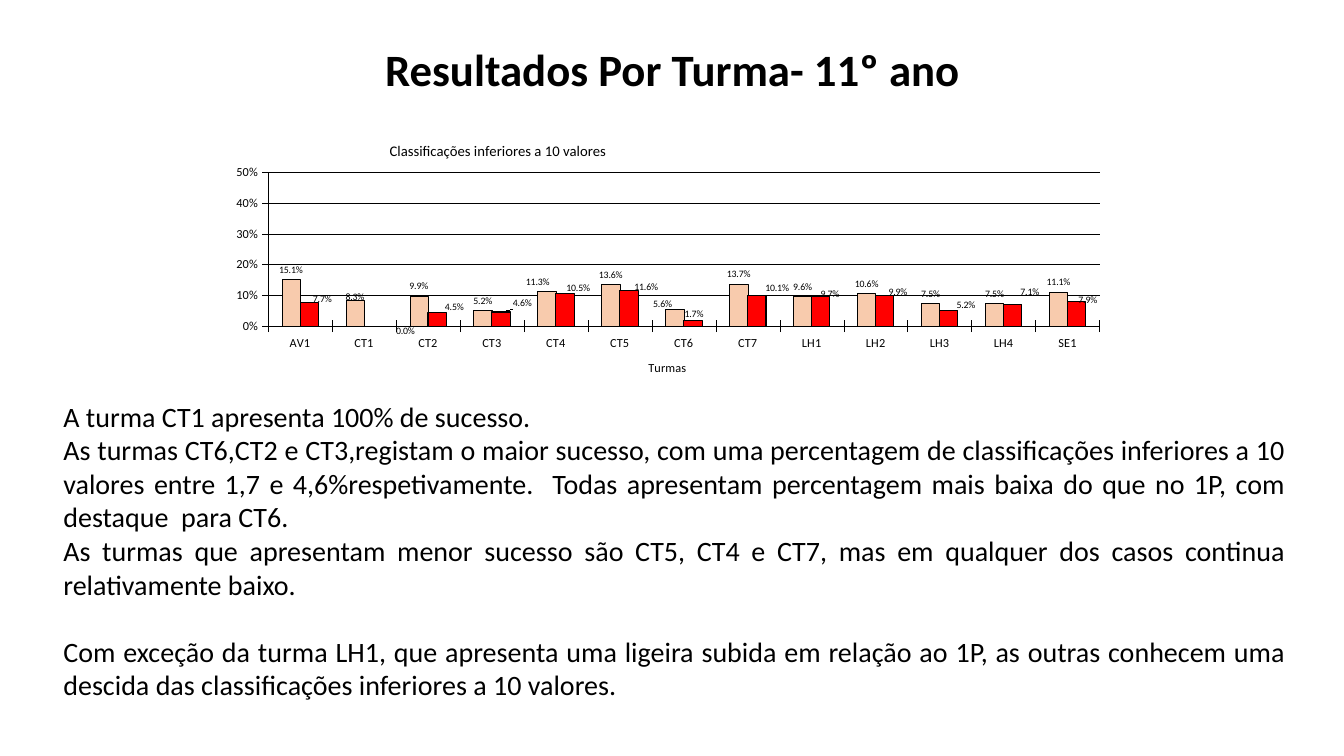
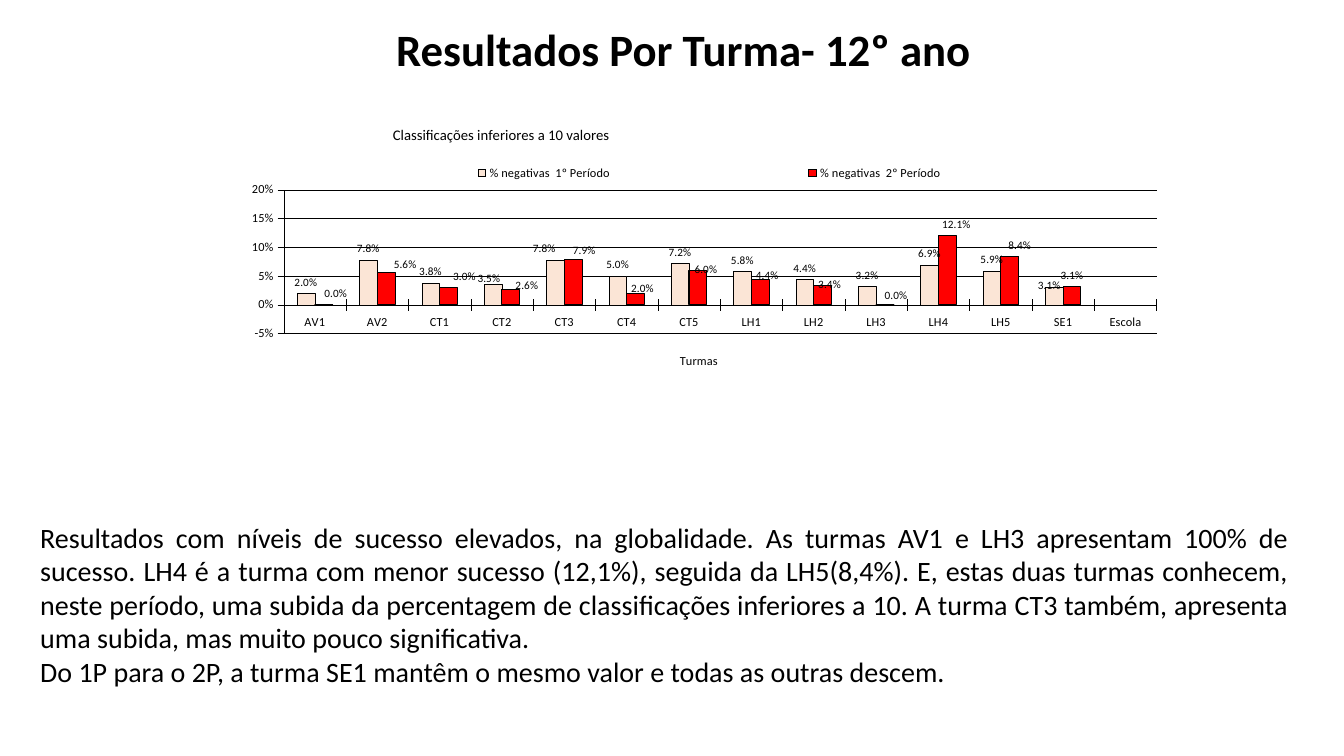
"""Build two slides of class results, each with a column chart and comments."""
from copy import deepcopy

from lxml import etree
from pptx import Presentation
from pptx.chart.data import CategoryChartData as Data
from pptx.dml.color import RGBColor
from pptx.enum.chart import XL_CHART_TYPE as Kind
from pptx.enum.chart import XL_LABEL_POSITION as Spot
from pptx.enum.chart import XL_LEGEND_POSITION as Side
from pptx.enum.chart import XL_TICK_MARK as Tick
from pptx.enum.text import MSO_ANCHOR as Anchor
from pptx.enum.text import PP_ALIGN as Align
from pptx.oxml.ns import qn
from pptx.util import Inches, Pt

FONT = "Calibri"
BLACK = "000000"
RED = "FF0000"


def hue(code):
    return RGBColor.from_string(code)


def lay(node, slot, place, edge=True):
    for old in node.findall(qn("c:layout")):
        node.remove(old)
    box = etree.Element(qn("c:layout"))
    node.insert(slot, box)
    man = etree.SubElement(box, qn("c:manualLayout"))
    tags = [("layoutTarget", "inner")] if node.tag == qn("c:plotArea") else []
    if edge:
        tags += [("xMode", "edge"), ("yMode", "edge")]
    tags += zip("xywh", place)
    for tag, val in tags:
        etree.SubElement(man, qn("c:" + tag)).set("val", str(val))


pages = [
    {
        "title": "Resultados Por Turma- 11º ano",
        "head": (0.92, 0.4),
        "text": (0.53, 3.91, 12.32, 3.47),
        "paras": [
            ("A turma CT1 apresenta 100% de sucesso.", 0),
            ("As turmas CT6,CT2 e CT3,registam o maior sucesso, com uma percentagem de "
             "classificações inferiores a 10 valores entre 1,7 e 4,6%respetivamente.  Todas "
             "apresentam percentagem mais baixa do que no 1P, com destaque  para CT6.", 0),
            ("As turmas que apresentam menor sucesso são CT5, CT4 e CT7, mas em qualquer "
             "dos casos continua relativamente baixo.", 0),
            ("Com exceção da turma LH1, que apresenta uma ligeira subida em relação ao 1P, "
             "as outras conhecem uma descida das classificações inferiores a 10 valores.", 24),
        ],
        "chart": (1.16, 1.03, 10.71, 2.83),
        "plot": (0.14, 0.24, 0.77, 0.54),
        "foot": (0.49, 0.89),
        "key": None,
        "scale": (0, 0.5, 0.1),
        "size": 7,
        "cats": "AV1 CT1 CT2 CT3 CT4 CT5 CT6 CT7 LH1 LH2 LH3 LH4 SE1",
        "rows": [
            ("Series 1", "F8CBAD", 0.25,
             [15.1, 8.3, 9.9, 5.2, 11.3, 13.6, 5.6, 13.7, 9.6, 10.6, 7.5, 7.5, 11.1],
             {1: (0, 6), 4: (-9, 0), 6: (-12, 5)}),
            ("Series 2", RED, 0.75,
             [7.7, 0, 4.5, 4.6, 10.5, 11.6, 1.7, 10.1, 9.7, 9.9, 5.2, 7.1, 7.9],
             dict(enumerate([(13, 6), (32, 14), (17, 4), (21, 1), (13, 4), (17, 6), (1, 3),
                             (20, 2), (9, 7), (13, 6), (17, 4), (17, -3), (11, 8)]))),
        ],
    },
    {
        "title": "Resultados Por Turma- 12º ano",
        "head": (1.03, 0.2),
        "text": (0.3, 5.11, 12.58, 1.78),
        "paras": [
            ("Resultados com níveis de sucesso elevados, na globalidade. As turmas AV1 e LH3 "
             "apresentam 100% de sucesso. LH4 é a turma com menor sucesso (12,1%), seguida da "
             "LH5(8,4%). E, estas duas turmas conhecem, neste período, uma subida da "
             "percentagem de classificações inferiores a 10. A turma CT3 também, apresenta "
             "uma subida, mas muito pouco significativa.", 0),
            ("Do 1P para o 2P, a turma SE1 mantêm o mesmo valor e todas as outras descem.", 0),
        ],
        "chart": (1.23, 0.82, 10.56, 3.32),
        "plot": (0.15, 0.32, 0.82, 0.43),
        "foot": (0.52, 0.8),
        "key": (0.15, 0.23, 0.8, 0.08),
        "scale": (-0.05, 0.2, 0.05),
        "size": 8,
        "cats": "AV1 AV2 CT1 CT2 CT3 CT4 CT5 LH1 LH2 LH3 LH4 LH5 SE1 Escola",
        "rows": [
            ("% negativas  1º Período", "FBE5D6", 0.25,
             [2, 7.8, 3.8, 3.5, 7.8, 5, 7.2, 5.8, 4.4, 3.2, 6.9, 5.9, 3.1, None],
             {3: (-4, 5), 4: (-11, 0), 12: (-5, 10)}),
            ("% negativas  2º Período", RED, 0.75,
             [0, 5.6, 3, 2.6, 7.9, 2, 6, 4.4, 3.4, 0, 12.1, 8.4, 3.1, None],
             dict(enumerate([(12, 0), (19, 3), (16, 0), (16, 7), (11, 2), (7, 6), (8, 10),
                             (7, 7), (7, 10), (11, 2), (9, 0), (10, 0)]))),
        ],
    },
]

deck = Presentation()
deck.slide_width, deck.slide_height = Inches(13.33), Inches(7.5)

for page in pages:
    slide = deck.slides.add_slide(deck.slide_layouts[5])
    title = slide.shapes.title
    title.left, title.top, title.width, title.height = map(Inches, (*page["head"], 11.5, 0.63))
    title.text_frame.text = page["title"]
    title.text_frame.vertical_anchor = Anchor.MIDDLE
    para = title.text_frame.paragraphs[0]
    para.alignment, para.line_spacing = Align.CENTER, 0.9
    para.font.name, para.font.size, para.font.bold = FONT, Pt(32), True
    para.font.color.rgb = hue(BLACK)

    frame = slide.shapes.add_textbox(*map(Inches, page["text"])).text_frame
    frame.word_wrap = True
    for i, (text, gap) in enumerate(page["paras"]):
        para = frame.add_paragraph() if i else frame.paragraphs[0]
        para.text = text
        para.alignment, para.space_before = Align.JUSTIFY, Pt(gap)
        para.font.name, para.font.size = FONT, Pt(20)
        para.font.color.rgb = hue(BLACK)

    data = Data(number_format="0.0%")
    data.categories = page["cats"].split()
    for name, _, _, vals, _ in page["rows"]:
        data.add_series(name, [None if v is None else round(v / 100, 3) for v in vals])
    chart = slide.shapes.add_chart(
        Kind.COLUMN_CLUSTERED, *map(Inches, page["chart"]), data).chart
    chart.font.name, chart.font.size = FONT, Pt(8.8)
    chart.font.color.rgb = hue(BLACK)
    lay(chart._chartSpace.chart.plotArea, 0, page["plot"])

    cat, val = chart.category_axis, chart.value_axis
    val.minimum_scale, val.maximum_scale, val.major_unit = page["scale"]
    val.tick_labels.number_format = "0%"
    val.tick_labels.number_format_is_linked = False
    val.has_major_gridlines = True
    for axis in (cat, val):
        axis.major_tick_mark = Tick.CROSS
    for line in (cat.format.line, val.format.line, val.major_gridlines.format.line):
        line.color.rgb, line.width = hue(BLACK), Pt(0.25)

    chart.has_title = True
    for label, text, size, spot in (
            (chart.chart_title, "Classificações inferiores a 10 valores", 10.5, (0.25, 0.12)),
            (cat.axis_title, "Turmas", 8.8, page["foot"])):
        label.text_frame.text = text
        font = label.text_frame.paragraphs[0].font
        font.name, font.size, font.bold = FONT, Pt(size), False
        font.color.rgb = hue(BLACK)
        lay(label._element, 1, spot)

    chart.has_legend = page["key"] is not None
    if chart.has_legend:
        chart.legend.position = Side.TOP
        chart.legend.include_in_layout = False
        lay(chart.legend._element, 1, page["key"])

    plot = chart.plots[0]
    plot.vary_by_categories, plot.gap_width, plot.overlap = False, 150, 0
    wide, high = page["chart"][2:]
    for bars, (_, color, width, _, shifts) in zip(plot.series, page["rows"]):
        bars.invert_if_negative = False
        bars.format.fill.solid()
        bars.format.fill.fore_color.rgb = hue(color)
        bars.format.line.color.rgb, bars.format.line.width = hue(BLACK), Pt(width)
        tags = bars.data_labels
        tags.show_value, tags.position = True, Spot.OUTSIDE_END
        tags.number_format, tags.number_format_is_linked = "0.0%", False
        tags.font.name, tags.font.size = FONT, Pt(page["size"])
        tags.font.color.rgb = hue(BLACK)
        root = tags._element
        parts = [p for p in root if p.tag != qn("c:showLeaderLines")]
        for slot, (point, (dx, dy)) in enumerate(shifts.items()):
            tag = etree.Element(qn("c:dLbl"))
            etree.SubElement(tag, qn("c:idx")).set("val", str(point))
            tag.extend(deepcopy(parts))
            lay(tag, 1, (dx / 100 / wide, dy / 100 / high), edge=False)
            root.insert(slot, tag)

deck.save("out.pptx")
